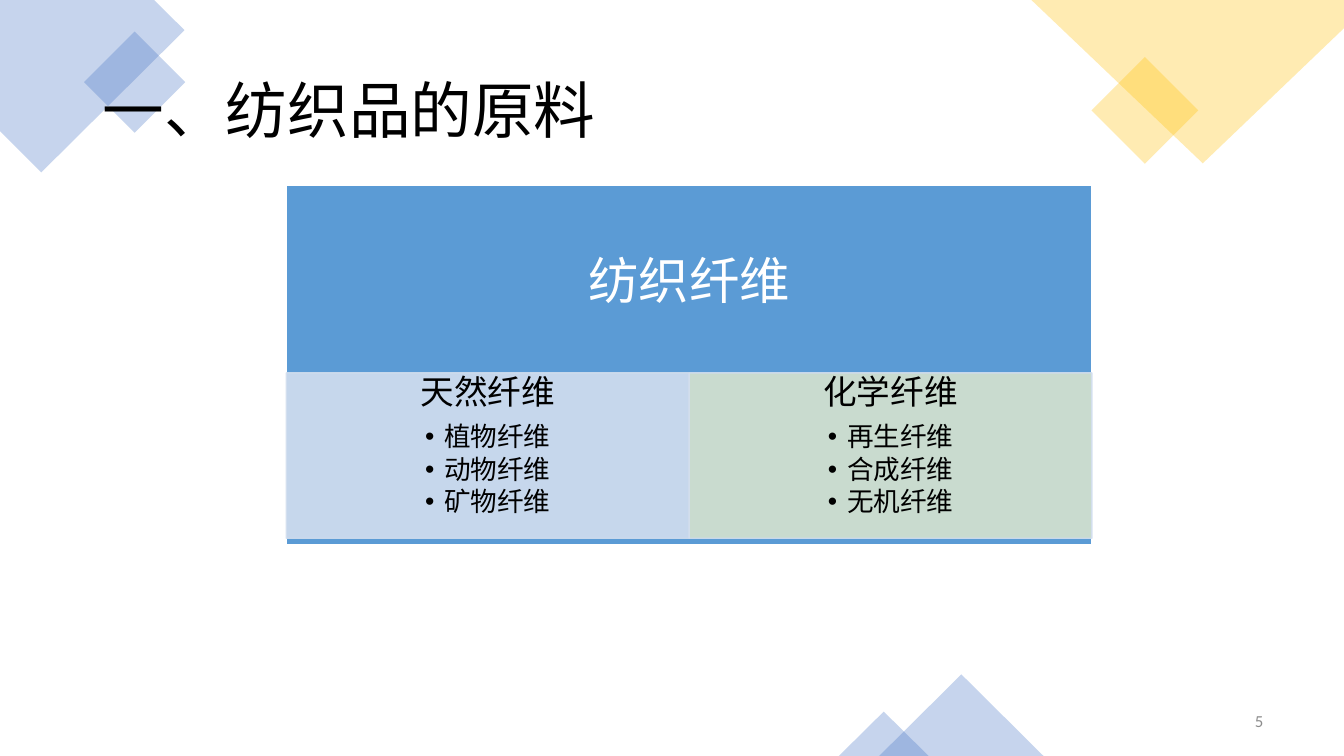
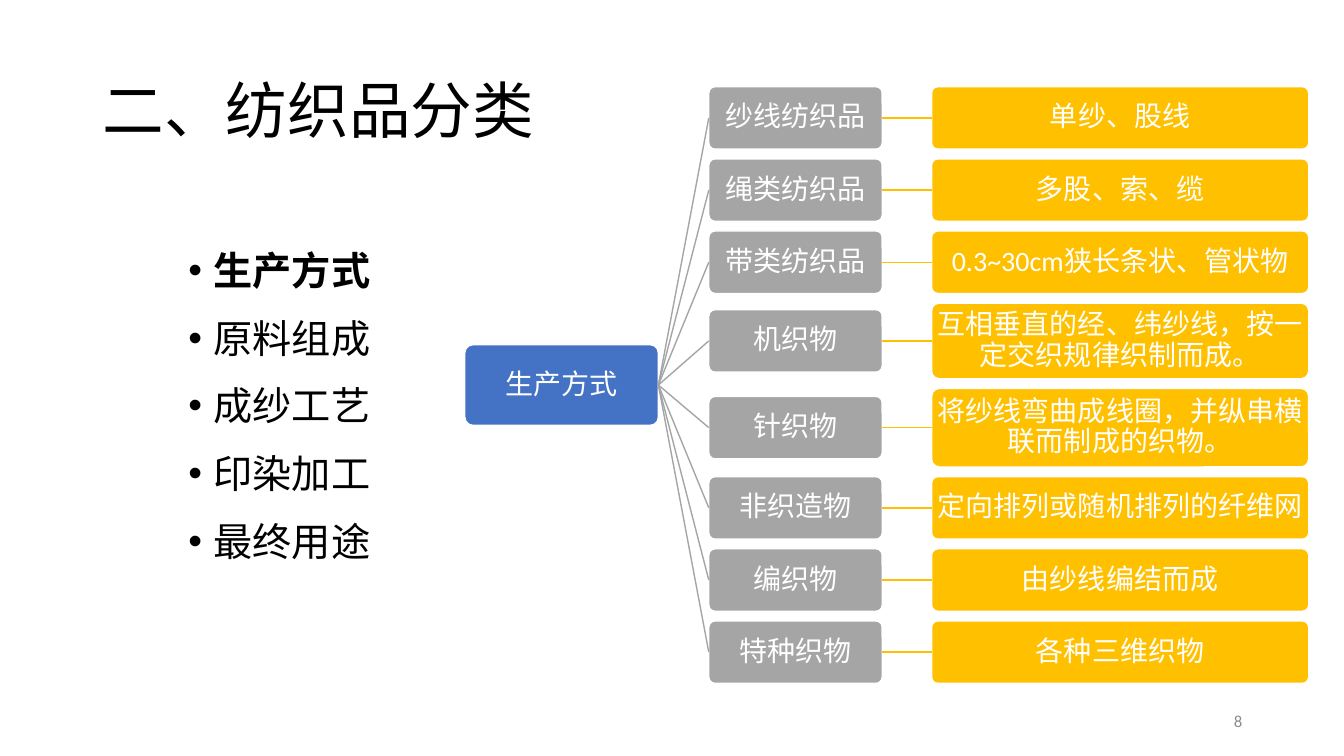
from dataclasses import dataclass

from lxml import etree
from pptx import Presentation
from pptx import util as u
from pptx.dml.color import RGBColor
from pptx.enum import shapes, text
from pptx.oxml.ns import qn

BLUE, GOLD, GRAY = "4472C4", "FFC000", "A5A5A5"
SKY, WHITE, BLACK, PAGE_GRAY = "5B9BD5", "FFFFFF", "000000", "8C8C8C"
PALE_BLUE, PALE_GREEN = "D2DEEF", "D5E3CF"
BODY_FONT, HEAD_FONT = "Calibri", "Noto Sans CJK SC"
LEFT, CENTER, RIGHT = text.PP_ALIGN.LEFT, text.PP_ALIGN.CENTER, text.PP_ALIGN.RIGHT
TOP, MIDDLE = text.MSO_ANCHOR.TOP, text.MSO_ANCHOR.MIDDLE
RECT = shapes.MSO_SHAPE.RECTANGLE
TRIANGLE = shapes.MSO_SHAPE.ISOSCELES_TRIANGLE
ROUNDED = shapes.MSO_SHAPE.ROUNDED_RECTANGLE


@dataclass(frozen=True)
class Box:
    left: float
    top: float
    width: float
    height: float

    def lengths(self) -> list:
        return [u.Inches(v) for v in (self.left, self.top, self.width, self.height)]


@dataclass(frozen=True)
class Line:
    words: str
    size: float
    color: str = BLACK
    font: str = BODY_FONT
    bold: bool = False
    align: text.PP_ALIGN = CENTER
    spacing: float = 0.9
    before: float = 0
    after: float = 0
    hang: float = 0


@dataclass(frozen=True)
class Ornament:
    kind: shapes.MSO_SHAPE
    box: Box
    color: str
    turn: float = 0


@dataclass(frozen=True)
class FiberGroup:
    name: str
    members: tuple[str, ...]
    color: str


@dataclass(frozen=True)
class FabricType:
    name: str
    meaning: str
    height: float = 0.62


ORNAMENTS = (
    Ornament(RECT, Box(0.98, 0.46, 0.71, 0.71), BLUE, 45),
    Ornament(RECT, Box(10.98, 0.72, 0.75, 0.75), GOLD, 45),
    Ornament(TRIANGLE, Box(8.72, 6.69, 1.63, 0.81), BLUE),
    Ornament(TRIANGLE, Box(8.32, 7.06, 0.89, 0.44), BLUE),
)
CORNERS = (
    (BLUE, ((0, 0), (1.53, 0), (1.83, 0.3), (0.41, 1.71), (0, 1.3))),
    (GOLD, ((13.33, 0), (10.23, 0), (11.93, 1.62), (13.33, 0.28))),
)
FIBERS = (
    FiberGroup("天然纤维", ("植物纤维", "动物纤维", "矿物纤维"), PALE_BLUE),
    FiberGroup("化学纤维", ("再生纤维", "合成纤维", "无机纤维"), PALE_GREEN),
)
CRITERIA = ("生产方式", "原料组成", "成纱工艺", "印染加工", "最终用途")
FABRICS = (
    FabricType("纱线纺织品", "单纱、股线"),
    FabricType("绳类纺织品", "多股、索、缆"),
    FabricType("带类纺织品", "0.3~30cm狭长条状、管状物"),
    FabricType("机织物", "互相垂直的经、纬纱线，按一定交织规律织制而成。", 0.75),
    FabricType("针织物", "将纱线弯曲成线圈，并纵串横联而制成的织物。", 0.78),
    FabricType("非织造物", "定向排列或随机排列的纤维网"),
    FabricType("编织物", "由纱线编结而成"),
    FabricType("特种织物", "各种三维织物"),
)


def paint(target, color: str, alpha: int = 100) -> None:
    """Give a fill or a line one colour and opacity."""
    target.solid()
    target.fore_color.rgb = RGBColor.from_string(color)
    if alpha < 100:
        tint = target._xPr.find(qn("a:solidFill"))[0]
        etree.SubElement(tint, qn("a:alpha"), val=str(alpha * 1000))


def finish(shape, color: str, alpha: int = 100, edge: str = "", edge_width: float = 1):
    """Set fill and outline, and drop the shadow."""
    shape.shadow.inherit = False
    paint(shape.fill, color, alpha)
    if edge:
        paint(shape.line.fill, edge, alpha)
        shape.line.width = u.Pt(edge_width)
    else:
        shape.line.fill.background()
    return shape


def write(shape, lines: list[Line], anchor=MIDDLE, inset=(0.1, 0.05)) -> None:
    """Fill a text frame with paragraphs."""
    frame = shape.text_frame
    frame.word_wrap = True
    frame.vertical_anchor = anchor
    frame.margin_left = frame.margin_right = u.Inches(inset[0])
    frame.margin_top = frame.margin_bottom = u.Inches(inset[1])
    for index, line in enumerate(lines):
        paragraph = frame.add_paragraph() if index else frame.paragraphs[0]
        if line.hang:
            props = paragraph._p.get_or_add_pPr()
            props.set("marL", str(u.Inches(line.hang)))
            props.set("indent", str(-u.Inches(line.hang)))
            etree.SubElement(props, qn("a:buFont"), typeface="Arial")
            etree.SubElement(props, qn("a:buChar"), char="•")
        paragraph.alignment = line.align
        paragraph.line_spacing = line.spacing
        paragraph.space_before = u.Pt(line.before if index else 0)
        paragraph.space_after = u.Pt(line.after)
        run = paragraph.add_run()
        run.text = line.words
        run.font.size = u.Pt(line.size)
        run.font.bold = line.bold
        run.font.name = line.font
        run.font.color.rgb = RGBColor.from_string(line.color)
        etree.SubElement(run._r.get_or_add_rPr(), qn("a:ea"), typeface=line.font)


def add_text(slide, box: Box, lines: list[Line], anchor=MIDDLE, inset=(0.1, 0.05)) -> None:
    """Place a text box."""
    write(slide.shapes.add_textbox(*box.lengths()), lines, anchor, inset)


def add_frame(slide, title: str, number: str, number_left: float) -> None:
    """Add the title and page number that the slides share."""
    add_text(slide, Box(0.92, 0.4, 11.5, 1.45), [Line(title, 44, font=HEAD_FONT, align=LEFT)])
    add_text(slide, Box(number_left, 6.95, 3, 0.4),
             [Line(number, 12, PAGE_GRAY, align=RIGHT, spacing=1)])


def add_ornaments(slide) -> None:
    """Draw the translucent corner pieces."""
    for color, points in CORNERS:
        outline = [(u.Inches(x), u.Inches(y)) for x, y in points]
        builder = slide.shapes.build_freeform(*outline[0])
        builder.add_line_segments(outline[1:])
        finish(builder.convert_to_shape(), color, 30)
    for piece in ORNAMENTS:
        shape = slide.shapes.add_shape(piece.kind, *piece.box.lengths())
        shape.rotation = piece.turn
        finish(shape, piece.color, 30)


def add_node(slide, box: Box, words: str, color: str):
    """Draw one rounded box of the tree."""
    node = slide.shapes.add_shape(ROUNDED, *box.lengths())
    node.adjustments[0] = 0.1
    finish(node, color, edge=WHITE)
    write(node, [Line(words, 20, WHITE)], inset=(0.03, 0.03))
    return node


def join(slide, start, end, color: str) -> None:
    """Connect the right side of one node to the left side of the next."""
    link = slide.shapes.add_connector(shapes.MSO_CONNECTOR.STRAIGHT, 0, 0, 0, 0)
    link.begin_connect(start, 3)
    link.end_connect(end, 1)
    paint(link.line.fill, color)
    link.line.width = u.Pt(1)
    etree.SubElement(link._element.spPr, qn("a:effectLst"))


def build_materials(slide) -> None:
    """Build the slide on raw materials."""
    add_ornaments(slide)
    add_frame(slide, "一、纺织品的原料", "5", 9.63)
    panel = Box(2.84, 1.84, 7.99, 3.57)
    backdrop = slide.shapes.add_shape(RECT, *panel.lengths())
    finish(backdrop, SKY, edge=WHITE, edge_width=1.5)
    add_text(slide, Box(panel.left, panel.top, panel.width, 1.93),
             [Line("纺织纤维", 36, WHITE)], inset=(0.28, 0.28))
    width = panel.width / len(FIBERS)
    for column, group in enumerate(FIBERS):
        box = Box(panel.left + column * width, 3.7, width, 1.64)
        cell = slide.shapes.add_shape(RECT, *box.lengths())
        finish(cell, group.color, 90, PALE_BLUE)
        members = [Line(name, 19, after=2.5, hang=0.19) for name in group.members]
        write(cell, [Line(group.name, 24, after=8.4), *members], TOP, (0.19, 0.03))


def build_classes(slide) -> None:
    """Build the slide on textile classes."""
    add_frame(slide, "二、纺织品分类", "8", 9.42)
    criteria = [Line(name, 28, font=HEAD_FONT, bold=index == 0, align=LEFT,
                     spacing=1.14, before=10, hang=0.25)
                for index, name in enumerate(CRITERIA)]
    add_text(slide, Box(1.77, 2.33, 2.09, 3.41), criteria, TOP)
    root = add_node(slide, Box(4.61, 3.42, 1.92, 0.8), CRITERIA[0], BLUE)
    top, bottom, name_height = 0.86, 6.78, 0.62
    gap = (bottom - top - sum(f.height for f in FABRICS)) / (len(FABRICS) - 1)
    for fabric in FABRICS:
        name_top = top + (fabric.height - name_height) / 2
        branch = add_node(slide, Box(7.03, name_top, 1.72, name_height), fabric.name, GRAY)
        leaf = add_node(slide, Box(9.24, top, 3.74, fabric.height), fabric.meaning, GOLD)
        join(slide, root, branch, GRAY)
        join(slide, branch, leaf, GOLD)
        top += fabric.height + gap


def main() -> None:
    """Build and save the presentation."""
    deck = Presentation()
    deck.slide_width, deck.slide_height = u.Inches(13.33), u.Inches(7.5)
    for build in (build_materials, build_classes):
        build(deck.slides.add_slide(deck.slide_layouts[6]))
    deck.save("out.pptx")


if __name__ == "__main__":
    main()
